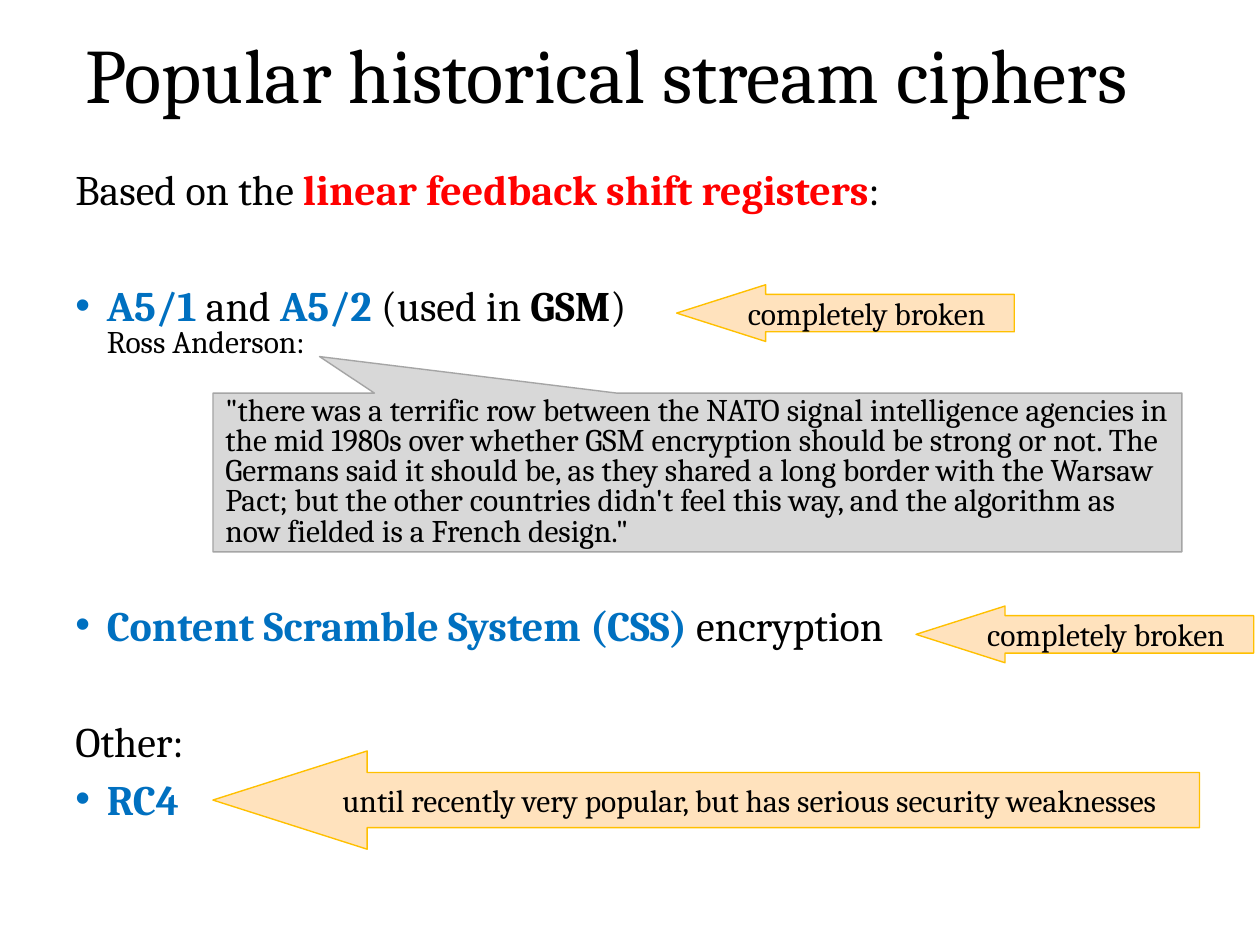
"""Build the slide on popular historical stream ciphers."""
from dataclasses import dataclass

import pptx
import pptx.dml.color
import pptx.enum.shapes
import pptx.enum.text
import pptx.oxml.ns
import pptx.util
from lxml import etree

Inches = pptx.util.Inches
Pt = pptx.util.Pt
RGBColor = pptx.dml.color.RGBColor
Kind = pptx.enum.shapes.MSO_SHAPE
Align = pptx.enum.text.PP_ALIGN
Anchor = pptx.enum.text.MSO_ANCHOR

BLACK = RGBColor(0x00, 0x00, 0x00)
RED = RGBColor(0xFF, 0x00, 0x00)
BLUE = RGBColor(0x00, 0x70, 0xC0)
PEACH = RGBColor(0xFF, 0xE2, 0xBD)
GOLD = RGBColor(0xFF, 0xC0, 0x00)
SILVER = RGBColor(0xD8, 0xD8, 0xD8)
GRAY = RGBColor(0xA5, 0xA5, 0xA5)
FONT = "Cambria"
GAP = 10
ROW = 33.1


@dataclass(frozen=True)
class Run:
    text: str
    color: RGBColor = BLACK
    bold: bool = False
    size: int = 24
    wrapped: bool = False


@dataclass(frozen=True)
class Para:
    runs: tuple[Run, ...]
    skip: int = 0
    bullet: bool = False


@dataclass(frozen=True)
class Note:
    text: str
    box: tuple[float, float, float, float]
    adjust: tuple[float, float]
    kind: Kind = Kind.LEFT_ARROW
    fill: RGBColor = PEACH
    line: RGBColor = GOLD
    align: Align = Align.LEFT
    wrap: bool = False
    space: float = 1.0


BODY = (
    Para((Run("Based on the "), Run("linear feedback shift registers", RED, True), Run(":"))),
    Para((Run("A5/1 ", BLUE, True), Run("and "), Run("A5/2 ", BLUE, True),
          Run("(used in "), Run("GSM", bold=True), Run(")"),
          Run("Ross Anderson:", size=18, wrapped=True)), 1, True),
    Para((Run("Content Scramble System (CSS) ", BLUE, True), Run("encryption")), 4, True),
    Para((Run("Other:"),), 1),
    Para((Run("RC4", BLUE, True),), bullet=True),
)

QUOTE = (
    "\"there was a terrific row between the NATO signal intelligence agencies in "
    "the mid 1980s over whether GSM encryption should be strong or not. The "
    "Germans said it should be, as they shared a long border with the Warsaw "
    "Pact; but the other countries didn't feel this way, and the algorithm as "
    "now fielded is a French design.\""
)
BROKEN = "completely broken"
NOTES = (
    Note("until recently very popular, but has serious security weaknesses",
         (1.69, 5.96, 7.83, 0.78), (0.56, 1.57), align=Align.CENTER),
    Note(BROKEN, (5.37, 2.26, 2.68, 0.45), (0.66, 1.57)),
    Note(QUOTE, (1.69, 3.12, 7.69, 1.26), (-0.39, -0.73), Kind.RECTANGULAR_CALLOUT,
         SILVER, GRAY, wrap=True, space=0.8),
    Note(BROKEN, (7.27, 4.81, 2.68, 0.45), (0.66, 1.57)),
)


def add_run(para: pptx.text.text._Paragraph, item: Run) -> None:
    if item.wrapped:
        para.add_line_break()
    run = para.add_run()
    run.text = item.text
    font = run.font
    font.name = FONT
    font.size = Pt(item.size)
    font.bold = item.bold
    font.color.rgb = item.color


def add_bullet(para: pptx.text.text._Paragraph) -> None:
    props = para._p.get_or_add_pPr()
    props.set("marL", str(Inches(0.25)))
    props.set("indent", str(-Inches(0.25)))
    qn = pptx.oxml.ns.qn
    etree.SubElement(props, qn("a:buFont")).set("typeface", "Arial")
    etree.SubElement(props, qn("a:buChar")).set("char", "•")


def add_title(slide: pptx.slide.Slide, text: str) -> None:
    box = slide.shapes.add_textbox(Inches(0.58), Inches(0), Inches(9), Inches(1.25))
    frame = box.text_frame
    frame.word_wrap = True
    frame.vertical_anchor = Anchor.MIDDLE
    para = frame.paragraphs[0]
    para.line_spacing = 0.9
    add_run(para, Run(text, size=44))


def add_body(slide: pptx.slide.Slide, items: tuple[Para, ...]) -> None:
    box = slide.shapes.add_textbox(Inches(0.5), Inches(1.33), Inches(9), Inches(5.33))
    frame = box.text_frame
    frame.word_wrap = True
    for index, item in enumerate(items):
        para = frame.add_paragraph() if index else frame.paragraphs[0]
        para.line_spacing = 0.8
        para.space_before = Pt(GAP + item.skip * ROW)
        if item.bullet:
            add_bullet(para)
        for run in item.runs:
            add_run(para, run)


def add_note(slide: pptx.slide.Slide, note: Note) -> None:
    shape = slide.shapes.add_shape(note.kind, *map(Inches, note.box))
    shape.shadow.inherit = False
    for index, value in enumerate(note.adjust):
        shape.adjustments[index] = value
    shape.fill.solid()
    shape.fill.fore_color.rgb = note.fill
    shape.line.color.rgb = note.line
    shape.line.width = Pt(0.79)
    frame = shape.text_frame
    frame.word_wrap = note.wrap
    frame.vertical_anchor = Anchor.MIDDLE
    para = frame.paragraphs[0]
    para.alignment = note.align
    para.line_spacing = note.space
    add_run(para, Run(note.text, size=18))


def main() -> None:
    deck = pptx.Presentation()
    deck.slide_width = Inches(10)
    deck.slide_height = Inches(7.5)
    slide = deck.slides.add_slide(deck.slide_layouts[6])
    add_title(slide, "Popular historical stream ciphers")
    add_body(slide, BODY)
    for note in NOTES:
        add_note(slide, note)
    deck.save("out.pptx")


if __name__ == "__main__":
    main()
